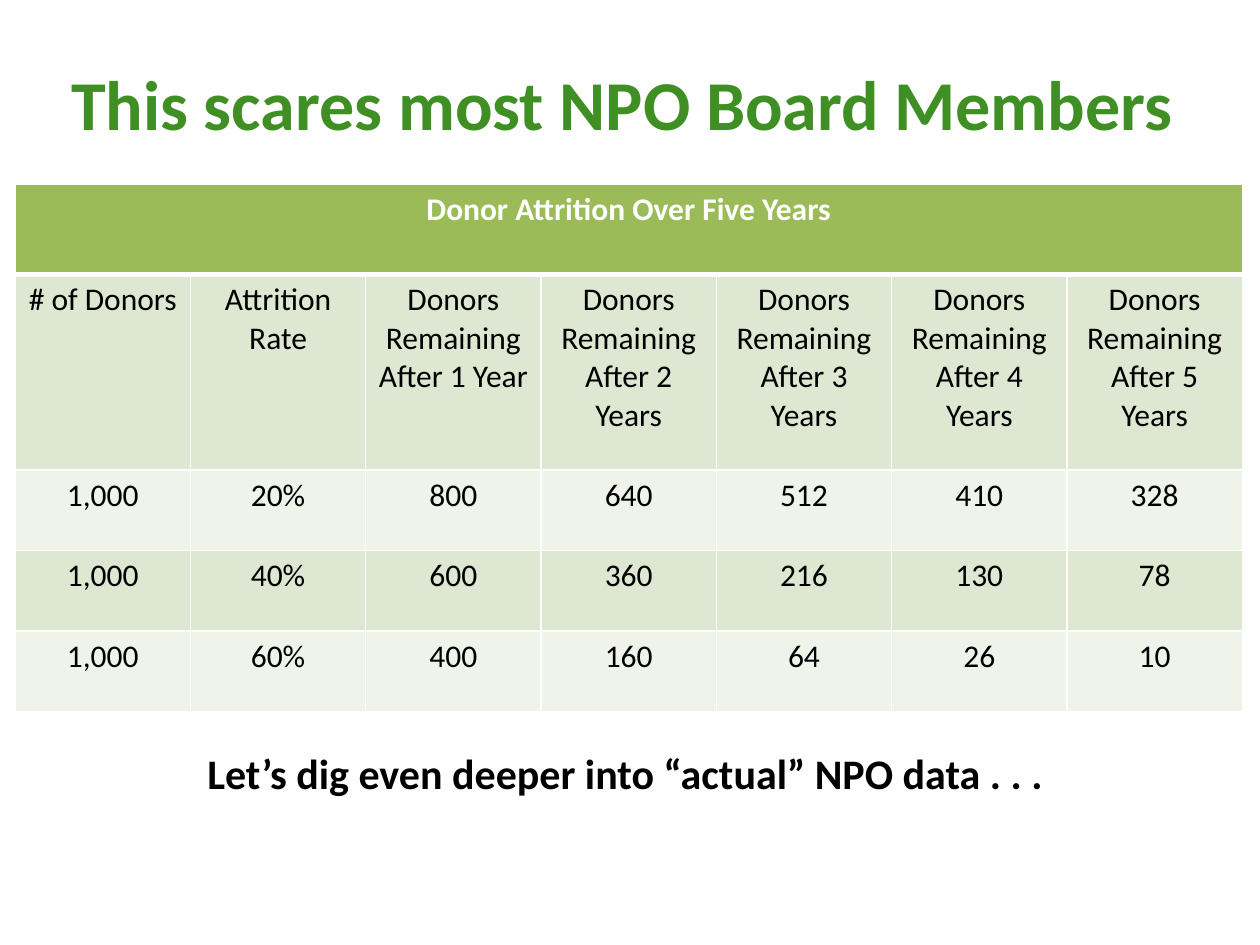
from dataclasses import dataclass

from lxml.etree import SubElement
from pptx import Presentation
from pptx.dml.color import RGBColor
from pptx.enum.text import MSO_ANCHOR, PP_ALIGN
from pptx.oxml.ns import qn
from pptx.util import Inches, Pt

FONT = "Calibri"
BLACK = RGBColor(0x00, 0x00, 0x00)
WHITE = RGBColor(0xFF, 0xFF, 0xFF)
TITLE_GREEN = RGBColor(0x3F, 0x8F, 0x24)
HEADER_GREEN = RGBColor(0x9B, 0xBB, 0x59)
BANDS = (RGBColor(0xDE, 0xE7, 0xD1), RGBColor(0xEF, 0xF3, 0xEA))

DONORS = 1000
YEARS = range(1, 6)
ATTRITION_PERCENTS = (20, 40, 60)
ROW_HEIGHTS = (0.72, 1.55, 0.64, 0.64, 0.64)
TABLE_WIDTH = 9.74


@dataclass
class Caption:
    text: str
    top: float
    height: float
    size: int
    color: RGBColor
    anchor: MSO_ANCHOR


CAPTIONS = (
    Caption("Let’s dig even deeper into “actual” NPO data . . . ",
            5.88, 3.25, 24, BLACK, MSO_ANCHOR.TOP),
    Caption("This scares most NPO Board Members ",
            0, 1.62, 40, TITLE_GREEN, MSO_ANCHOR.MIDDLE),
)


def style_paragraph(paragraph, size: int, color: RGBColor, bold: bool) -> None:
    paragraph.alignment = PP_ALIGN.CENTER
    font = paragraph.font
    font.name, font.size, font.bold = FONT, Pt(size), bold
    font.color.rgb = color


def add_caption(slide, caption: Caption) -> None:
    box = slide.shapes.add_textbox(0, Inches(caption.top), Inches(10), Inches(caption.height))
    frame = box.text_frame
    frame.word_wrap = True
    frame.vertical_anchor = caption.anchor
    frame.text = caption.text
    style_paragraph(frame.paragraphs[0], caption.size, caption.color, True)


def set_borders(cell, top: float = 1, bottom: float = 1) -> None:
    properties = cell._tc.get_or_add_tcPr()
    for side, width in (("lnL", 1), ("lnR", 1), ("lnT", top), ("lnB", bottom)):
        line = SubElement(properties, qn(f"a:{side}"), w=str(Pt(width)))
        fill = SubElement(line, qn("a:solidFill"))
        SubElement(fill, qn("a:srgbClr"), val=str(WHITE))


def fill_cell(cell, text: str, fill: RGBColor, color: RGBColor = BLACK, bold: bool = False,
              top: float = 1, bottom: float = 1) -> None:
    cell.text = text
    style_paragraph(cell.text_frame.paragraphs[0], 18, color, bold)
    # Borders precede the fill in the cell properties
    set_borders(cell, top, bottom)
    cell.fill.solid()
    cell.fill.fore_color.rgb = fill


def attrition_rows() -> list[list[str]]:
    headings = ["# of Donors", "Attrition Rate"]
    headings += [f"Donors Remaining After {year} Year{'s' if year > 1 else ''}" for year in YEARS]
    rows = [headings]
    for percent in ATTRITION_PERCENTS:
        remaining = [f"{DONORS * (1 - percent / 100) ** year:.0f}" for year in YEARS]
        rows.append([f"{DONORS:,}", f"{percent}%", *remaining])
    return rows


def add_attrition_table(slide) -> None:
    rows = attrition_rows()
    columns = len(rows[0])
    table = slide.shapes.add_table(
        len(ROW_HEIGHTS), columns, Inches(0.12), Inches(1.46),
        Inches(TABLE_WIDTH), Inches(sum(ROW_HEIGHTS))).table
    for column in table.columns:
        column.width = Inches(TABLE_WIDTH / columns)
    for row, height in zip(table.rows, ROW_HEIGHTS):
        row.height = Inches(height)

    # Heading across all columns
    table.cell(0, 0).merge(table.cell(0, columns - 1))
    fill_cell(table.cell(0, 0), "Donor Attrition Over Five Years",
              HEADER_GREEN, WHITE, True, bottom=3)

    # Banded rows
    for r, texts in enumerate(rows, start=1):
        for c, text in enumerate(texts):
            fill_cell(table.cell(r, c), text, BANDS[(r - 1) % 2], top=3 if r == 1 else 1)


def main() -> None:
    deck = Presentation()
    deck.slide_width, deck.slide_height = Inches(10), Inches(7.5)
    slide = deck.slides.add_slide(deck.slide_layouts[6])
    for caption in CAPTIONS:
        add_caption(slide, caption)
    add_attrition_table(slide)
    deck.save("out.pptx")


if __name__ == "__main__":
    main()
